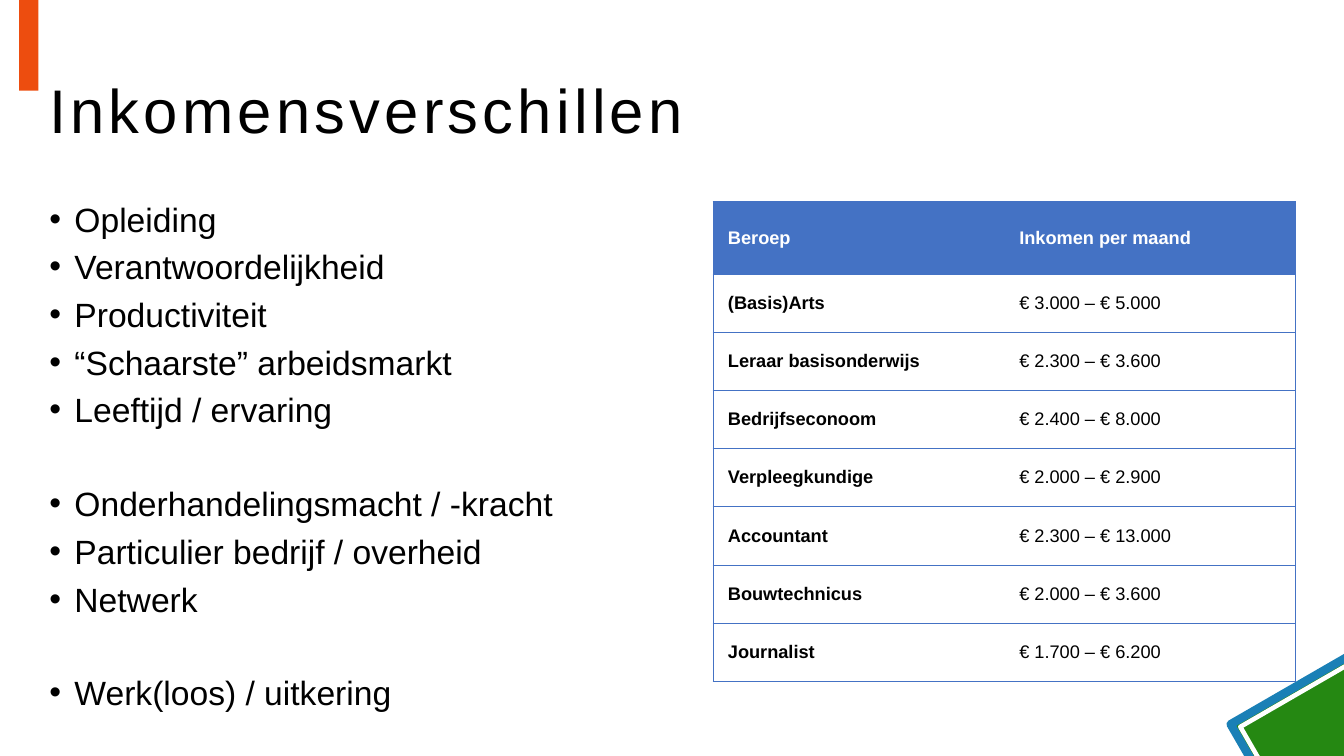
from pptx import Presentation
from pptx.dml.color import RGBColor
from pptx.enum import shapes, text
from pptx.oxml import parse_xml
from pptx.oxml.ns import nsdecls
from pptx.util import Inches, Pt

COLORS = {"black": "000000", "white": "FFFFFF", "table": "4472C4",
          "orange": "ED4D0F", "green": "258812", "blue": "1A80B6"}
FONT = "Arial"

FACTOR_GROUPS = [
    ["Opleiding", "Verantwoordelijkheid", "Productiviteit",
     "“Schaarste” arbeidsmarkt", "Leeftijd / ervaring"],
    ["Onderhandelingsmacht / -kracht", "Particulier bedrijf / overheid", "Netwerk"],
    ["Werk(loos) / uitkering"],
]
INCOMES = [
    ("Beroep", "Inkomen per maand"),
    ("(Basis)Arts", "€ 3.000 – € 5.000"),
    ("Leraar basisonderwijs", "€ 2.300 – € 3.600"),
    ("Bedrijfseconoom", "€ 2.400 – € 8.000"),
    ("Verpleegkundige", "€ 2.000 – € 2.900"),
    ("Accountant", "€ 2.300 – € 13.000"),
    ("Bouwtechnicus", "€ 2.000 – € 3.600"),
    ("Journalist", "€ 1.700 – € 6.200"),
]


def color(name):
    return RGBColor.from_string(COLORS[name])


def style(font, size, name="black", bold=False):
    font.name, font.size, font.bold = FONT, Pt(size), bold
    font.color.rgb = color(name)


def add_block(page, box, fill=None, line=None, width=0, rotation=0):
    block = page.shapes.add_shape(shapes.MSO_SHAPE.RECTANGLE, *map(Inches, box))
    block.shadow.inherit = False
    block.rotation = rotation
    if fill:
        block.fill.solid()
        block.fill.fore_color.rgb = color(fill)
    else:
        block.fill.background()
    if line:
        block.line.color.rgb = color(line)
        block.line.width = Pt(width)
    else:
        block.line.fill.background()


def add_decoration(page, box):
    left, top, size = box
    inset = 0.07
    # Tilted corner square with a white inner frame
    add_block(page, (left, top, size, size), "green", "blue", 6, 60)
    add_block(page, (left + inset, top + inset, size - 2 * inset, size - 2 * inset),
              line="white", width=3.25, rotation=60)
    # Accent bar at the top edge
    add_block(page, (0.19, -0.25, 0.19, 1.15), "orange")


def add_title(page, box, title):
    frame = page.shapes.add_textbox(*map(Inches, box)).text_frame
    frame.word_wrap = True
    frame.vertical_anchor = text.MSO_ANCHOR.MIDDLE
    para = frame.paragraphs[0]
    para.text = title
    para.line_spacing = 0.9
    span = para.runs[0]
    style(span.font, 44)
    span.font._element.set("spc", "300")


def add_factors(page, box, groups):
    frame = page.shapes.add_textbox(*map(Inches, box)).text_frame
    frame.word_wrap = True
    for group_index, group in enumerate(groups):
        for item_index, factor in enumerate(group):
            first = group_index == item_index == 0
            para = frame.paragraphs[0] if first else frame.add_paragraph()
            para.text = factor
            para.line_spacing = 0.8
            # A new group starts one line lower
            para.space_before = Pt(0 if first else 11 if item_index else 44)
            properties = para._p.get_or_add_pPr()
            properties.set("marL", str(Inches(0.25)))
            properties.set("indent", str(Inches(-0.25)))
            properties.append(parse_xml(f'<a:buFont {nsdecls("a")} typeface="{FONT}"/>'))
            properties.append(parse_xml(f'<a:buChar {nsdecls("a")} char="•"/>'))
            style(para.runs[0].font, 24)


def set_borders(cell, visible):
    properties = cell._tc.get_or_add_tcPr()
    for index, side in enumerate(("lnL", "lnR", "lnT", "lnB")):
        paint = (f'<a:solidFill><a:srgbClr val="{COLORS["table"]}"/></a:solidFill>'
                 if side in visible else "<a:noFill/>")
        properties.insert(index, parse_xml(
            f'<a:{side} {nsdecls("a")} w="{Pt(0.5)}">{paint}</a:{side}>'))


def add_income_table(page, box, rows):
    left, top, width, height = map(Inches, box)
    table = page.shapes.add_table(len(rows), 2, left, top, width, height).table
    header_height = Inches(0.72)
    for row_index, values in enumerate(rows):
        header = row_index == 0
        table.rows[row_index].height = (
            header_height if header else (height - header_height) // (len(rows) - 1))
        for column_index, value in enumerate(values):
            cell = table.cell(row_index, column_index)
            cell.text = value
            cell.vertical_anchor = text.MSO_ANCHOR.MIDDLE
            cell.margin_left = cell.margin_right = Inches(0.15)
            cell.margin_top = cell.margin_bottom = Inches(0.15 if header else 0.07)
            if header:
                cell.fill.solid()
                cell.fill.fore_color.rgb = color("table")
            else:
                cell.fill.background()
            style(cell.text_frame.paragraphs[0].runs[0].font, 13,
                  "white" if header else "black", header or column_index == 0)
            set_borders(cell, {"lnT", "lnB", "lnR" if column_index else "lnL"})


def main():
    deck = Presentation()
    deck.slide_width, deck.slide_height = Inches(13.33), Inches(7.5)
    page = deck.slides.add_slide(deck.slide_layouts[6])
    add_decoration(page, (12.48, 6.71, 1.5))
    add_title(page, (0.39, 0.4, 12.58, 1.45), "Inkomensverschillen")
    add_income_table(page, (7.07, 2, 5.78, 4.76), INCOMES)
    add_factors(page, (0.39, 2, 6.19, 5.1), FACTOR_GROUPS)
    deck.save("out.pptx")


if __name__ == "__main__":
    main()
